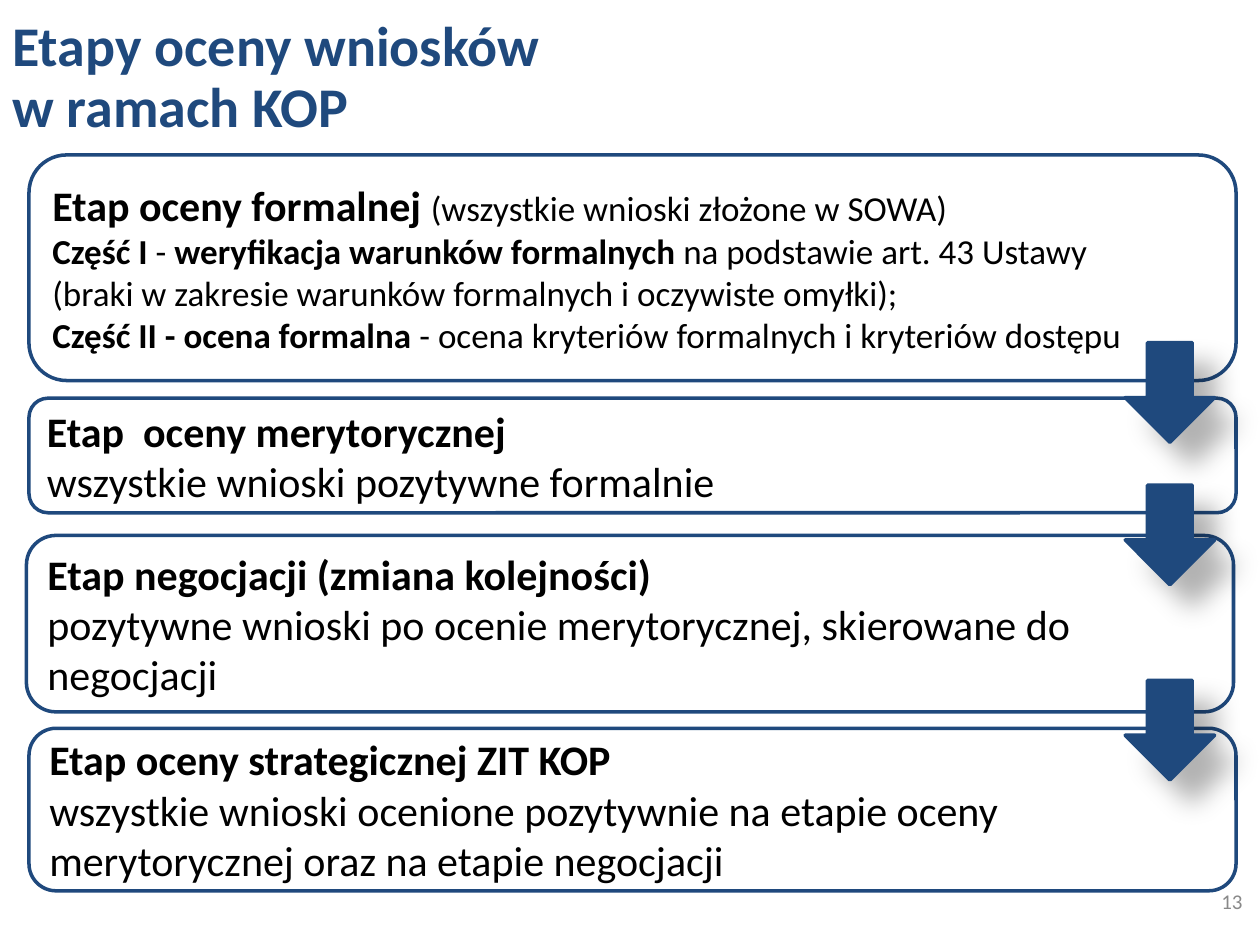
from dataclasses import dataclass

from lxml import etree
from pptx import Presentation
from pptx.dml.color import RGBColor
from pptx.enum.shapes import MSO_SHAPE
from pptx.enum.text import MSO_ANCHOR, PP_ALIGN
from pptx.oxml.ns import qn
from pptx.util import Emu, Inches, Pt

ROUNDED = MSO_SHAPE.ROUNDED_RECTANGLE
DOWN_ARROW = MSO_SHAPE.DOWN_ARROW
MIDDLE = MSO_ANCHOR.MIDDLE
LEFT, RIGHT = PP_ALIGN.LEFT, PP_ALIGN.RIGHT

FONT = "Calibri"
COLORS = {"navy": "1F497D", "white": "FFFFFF", "black": "000000", "grey": "898989"}
SLIDE_WIDTH, SLIDE_HEIGHT = Inches(10), Inches(7.5)
COLUMNS, ROWS = 100, 75
STAGE_LEFT, STAGE_WIDTH = 2.3, 95.8
ARROW_LEFT, ARROW_WIDTH, ARROW_HEIGHT = 89.3, 7.1, 7.9
ARROW_TOPS = (27.2, 38.5, 54)


@dataclass(frozen=True)
class Span:
    text: str
    size: int = 24
    bold: bool = False
    color: str = "black"


@dataclass(frozen=True)
class Stage:
    top: float
    height: float
    paragraphs: tuple[tuple[Span, ...], ...]
    left: float = STAGE_LEFT


STAGES = (
    Stage(12.3, 17.9, (
        (Span("Etap oceny formalnej ", bold=True),
         Span("(wszystkie wnioski złożone w SOWA)", 20)),
        (Span("Część I ", 20, True), Span("- ", 20),
         Span("weryfikacja warunków formalnych ", 20, True),
         Span("na podstawie art. 43 Ustawy", 20)),
        (Span("(braki w zakresie warunków formalnych i oczywiste omyłki);", 20),),
        (Span("Część II - ocena formalna ", 20, True),
         Span("- ocena kryteriów formalnych i kryteriów dostępu", 20)),
    )),
    Stage(31.6, 9.1, (
        (Span("Etap  oceny merytorycznej", bold=True),),
        (Span("wszystkie wnioski pozytywne formalnie"),),
    )),
    Stage(42.5, 14, (
        (Span("Etap negocjacji (zmiana kolejności)", bold=True),),
        (Span("pozytywne wnioski po ocenie merytorycznej, skierowane do negocjacji"),),
    ), left=2.1),
    Stage(57.8, 12.9, (
        (Span("Etap oceny strategicznej ZIT KOP", bold=True),),
        (Span("wszystkie wnioski ocenione pozytywnie na etapie oceny "
              "merytorycznej oraz na etapie negocjacji"),),
    )),
)


def rgb(name: str) -> RGBColor:
    return RGBColor.from_string(COLORS[name])


def place(left: float, top: float, width: float, height: float) -> tuple[Emu, ...]:
    column, row = SLIDE_WIDTH / COLUMNS, SLIDE_HEIGHT / ROWS
    return tuple(Emu(round(value)) for value in
                 (left * column, top * row, width * column, height * row))


def style_font(font, span: Span) -> None:
    font.name = FONT
    font.size = Pt(span.size)
    font.bold = span.bold
    font.color.rgb = rgb(span.color)


def write(frame, paragraphs: tuple[tuple[Span, ...], ...],
          alignment=LEFT, spacing: float = 1.0) -> None:
    frame.word_wrap = True
    frame.vertical_anchor = MIDDLE
    for index, spans in enumerate(paragraphs):
        para = frame.add_paragraph() if index else frame.paragraphs[0]
        para.alignment = alignment
        para.line_spacing = spacing
        style_font(para.font, spans[0])
        for span in spans:
            if len(spans) == 1:
                para.text = span.text
            else:
                run = para.add_run()
                run.text = span.text
                style_font(run.font, span)


def add_label(page, area: tuple[Emu, ...], span: Span,
              alignment=LEFT, spacing: float = 1.0) -> None:
    box = page.shapes.add_textbox(*area)
    write(box.text_frame, ((span,),), alignment, spacing)


def add_block(page, kind, area: tuple[Emu, ...], fill: str):
    block = page.shapes.add_shape(kind, *area)
    block.shadow.inherit = False
    block.fill.solid()
    block.fill.fore_color.rgb = rgb(fill)
    block.line.color.rgb = rgb("navy")
    block.line.width = Pt(2)
    return block


def add_stage(page, stage: Stage) -> None:
    area = place(stage.left, stage.top, STAGE_WIDTH, stage.height)
    block = add_block(page, ROUNDED, area, "white")
    write(block.text_frame, stage.paragraphs)


def add_arrow(page, top: float) -> None:
    area = place(ARROW_LEFT, top, ARROW_WIDTH, ARROW_HEIGHT)
    arrow = add_block(page, DOWN_ARROW, area, "navy")
    effects = arrow.element.spPr.find(qn("a:effectLst"))
    shadow = etree.SubElement(effects, qn("a:outerShdw"), blurRad=str(Pt(15)),
                              dist=str(Pt(18)), dir=str(45 * 60000),
                              algn="tl", rotWithShape="0")
    color = etree.SubElement(shadow, qn("a:srgbClr"), val=COLORS["black"])
    etree.SubElement(color, qn("a:alpha"), val="30000")


def main() -> None:
    deck = Presentation()
    deck.slide_width, deck.slide_height = SLIDE_WIDTH, SLIDE_HEIGHT
    page = deck.slides.add_slide(deck.slide_layouts[6])
    add_label(page, place(0, 0, 90.2, 12.5),
              Span("Etapy oceny wniosków\vw ramach KOP", 32, True, "navy"),
              spacing=0.9)
    for stage in STAGES:
        add_stage(page, stage)
    for top in ARROW_TOPS:
        add_arrow(page, top)
    add_label(page, place(76.3, 69.5, 23.3, 4),
              Span("13", 12, color="grey"), RIGHT)
    deck.save("out.pptx")


if __name__ == "__main__":
    main()
